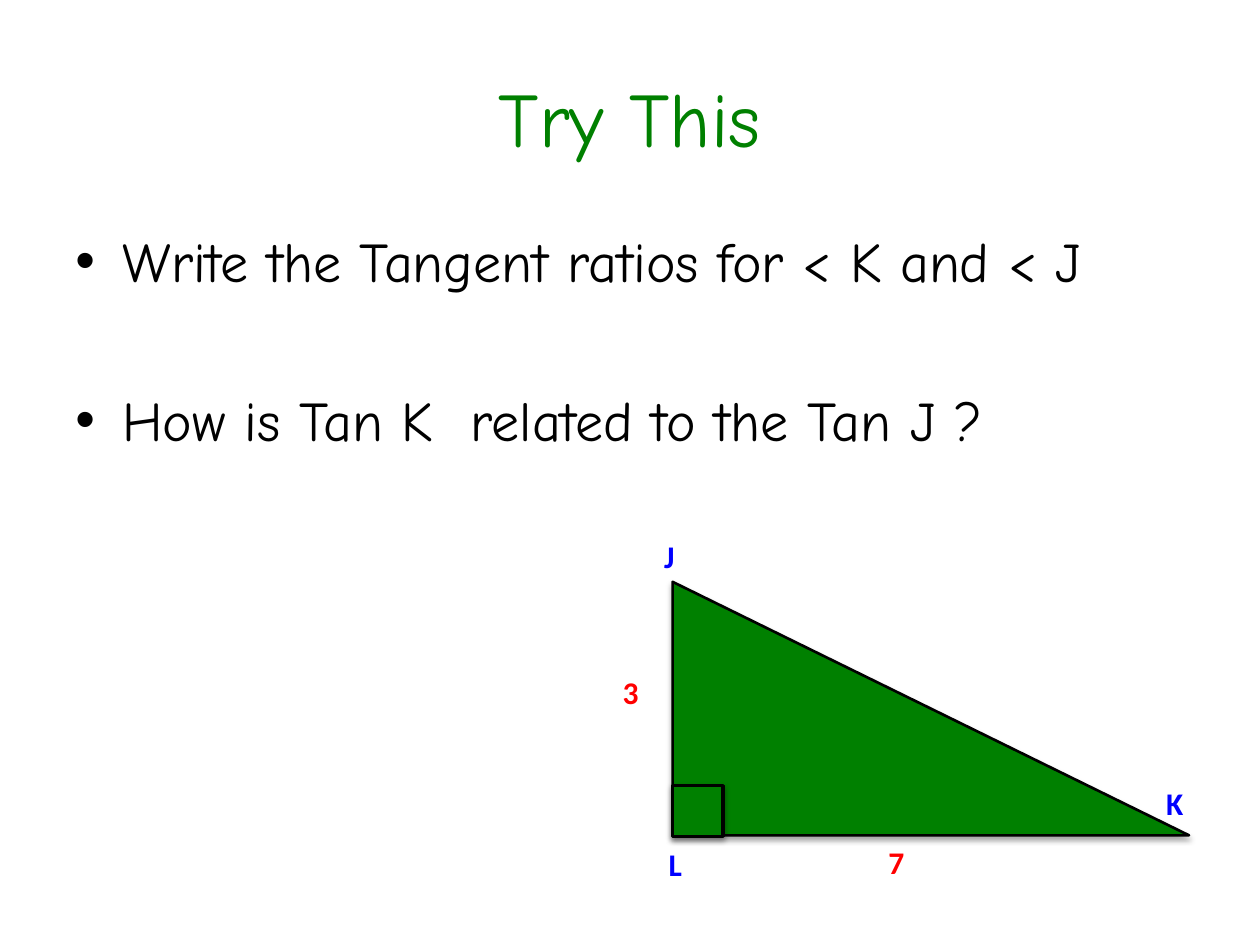
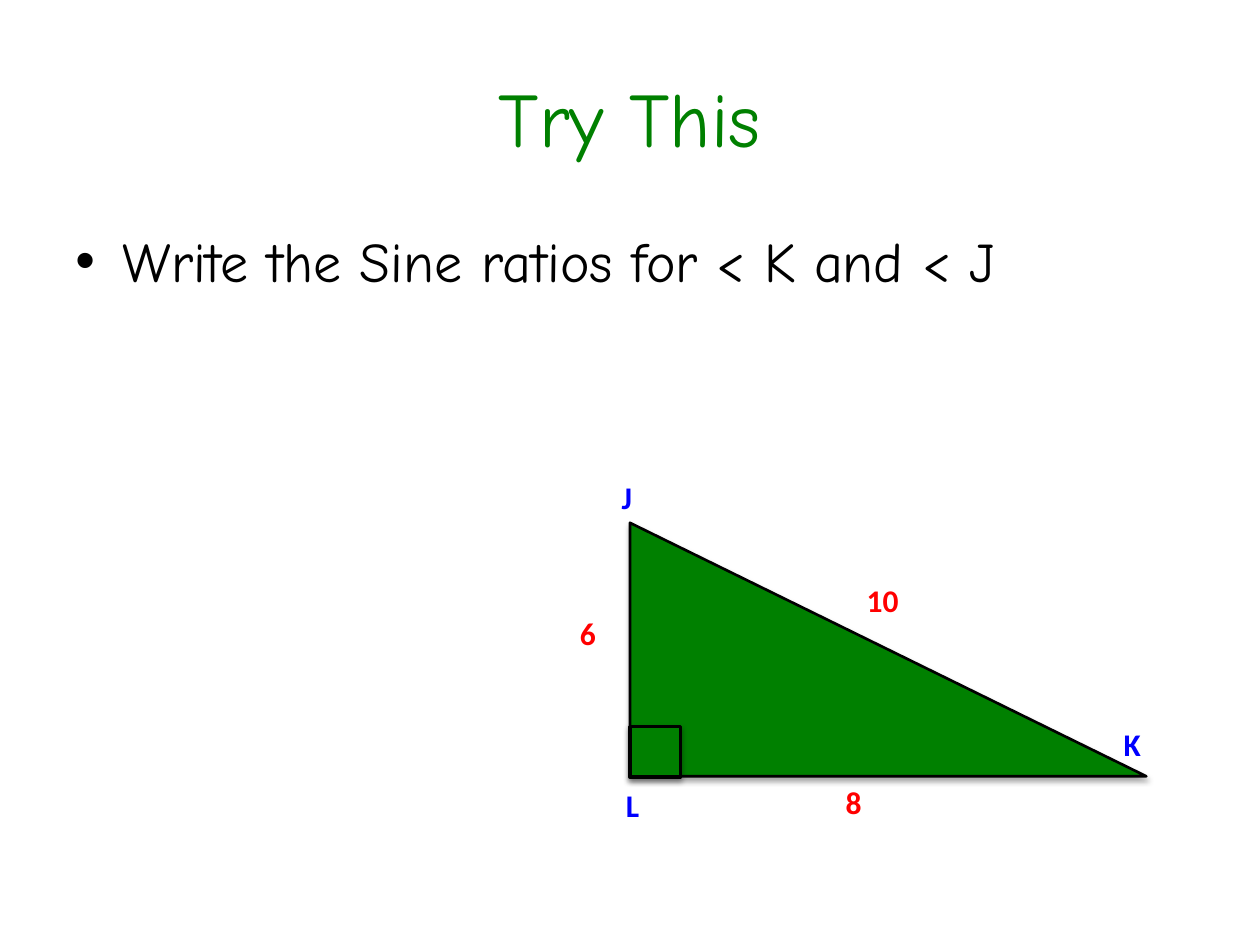
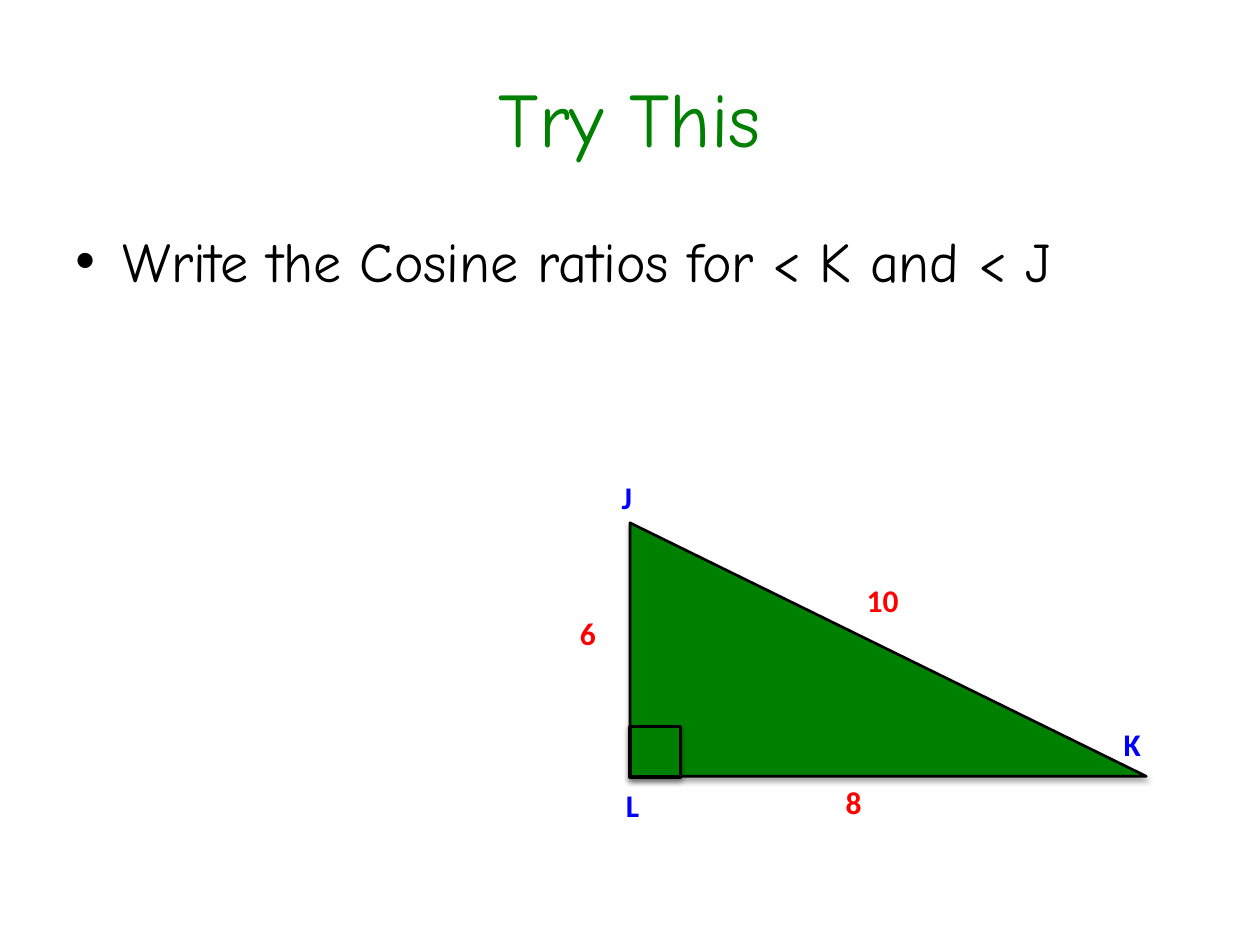
from lxml import etree
from pptx import Presentation
from pptx import util as u
from pptx.dml.color import RGBColor
from pptx.enum import shapes, text
from pptx.oxml.ns import qn

GREEN, BLACK, BLUE, RED = "008000", "000000", "0000FF", "FF0000"
HEAD_FONT, LABEL_FONT = "Comic Neue", "Calibri"
LABEL_H = 1.02


def rgb(code):
    return RGBColor.from_string(code)


class Deck:
    def __init__(self):
        self.prs = Presentation()
        self.prs.slide_width, self.prs.slide_height = u.Cm(25.4), u.Cm(19.05)
        self.s = None

    def new_slide(self):
        self.s = self.prs.slides.add_slide(self.prs.slide_layouts[6])

    def text(self, x, y, w, h, lines, size, color, font, bold=False):
        """Add a wrapped text box with one paragraph per line and return its frame."""
        tf = self.s.shapes.add_textbox(u.Cm(x), u.Cm(y), u.Cm(w), u.Cm(h)).text_frame
        tf.word_wrap = True
        tf.text = "\n".join(lines)
        for p in tf.paragraphs:
            for r in p.runs:
                r.font.size, r.font.name, r.font.bold = u.Pt(size), font, bold
                r.font.color.rgb = rgb(color)
        return tf

    def title(self, line):
        tf = self.text(1.27, 0.76, 22.86, 3.18, [line], 44, GREEN, HEAD_FONT)
        tf.vertical_anchor = text.MSO_ANCHOR.MIDDLE
        tf.paragraphs[0].alignment = text.PP_ALIGN.CENTER

    def bullets(self, lines):
        tf = self.text(1.27, 4.45, 22.86, 12.57, lines, 32, BLACK, HEAD_FONT)
        for i, p in enumerate(tf.paragraphs):
            p.space_before = u.Pt(52 if i else 6.4)
            pPr = p._p.get_or_add_pPr()
            pPr.set("marL", str(u.Cm(0.95)))
            pPr.set("indent", str(u.Cm(-0.95)))
            etree.SubElement(pPr, qn("a:buFont")).set("typeface", "Arial")
            etree.SubElement(pPr, qn("a:buChar")).set("char", "•")

    def label(self, x, y, w, line, color):
        tf = self.text(x, y, w, LABEL_H, [line], 18, color, LABEL_FONT, bold=True)
        tf.auto_size = text.MSO_AUTO_SIZE.SHAPE_TO_FIT_TEXT

    def shape(self, kind, x, y, w, h, line_width):
        sp = self.s.shapes.add_shape(kind, u.Cm(x), u.Cm(y), u.Cm(w), u.Cm(h))
        sp.fill.solid()
        sp.fill.fore_color.rgb = rgb(GREEN)
        sp.line.color.rgb = rgb(BLACK)
        sp.line.width = u.Pt(line_width)
        self.soft_shadow(sp)

    def soft_shadow(self, sp):
        """Replace the theme shadow with a faint one straight below the shape."""
        sp.shadow.inherit = False
        effects = sp._element.spPr.find(qn("a:effectLst"))
        shadow = etree.SubElement(effects, qn("a:outerShdw"), blurRad=str(u.Pt(3.1)),
                                  dist=str(u.Pt(1.8)), dir="5400000", rotWithShape="0")
        color = etree.SubElement(shadow, qn("a:srgbClr"), val=BLACK)
        etree.SubElement(color, qn("a:alpha"), val="35000")

    def right_triangle(self, x, y, left, bottom, hypotenuse=None):
        """Draw triangle JLK with its top corner J at x, y and its known side lengths."""
        self.shape(shapes.MSO_SHAPE.RIGHT_TRIANGLE, x, y, 10.41, 5.11, 1.5)
        for name, dx, dy, w in (("J", -0.42, -1.02, 0.84), ("L", -0.33, 5.18, 0.84),
                                ("K", 9.7, 3.96, 1.35)):
            self.label(x + dx, y + dy, w, name, BLUE)
        self.shape(shapes.MSO_SHAPE.RECTANGLE, x, y + 4.11, 1.02, 1.02, 2)
        for length, dx, dy in ((left, -1.26, 1.71), (bottom, 4.1, 5.13),
                               (hypotenuse, 4.52, 1.04)):
            if length:
                self.label(x + dx, y + dy, 1.37, str(length), RED)


def main():
    deck = Deck()
    exercises = (
        (["Write the Tangent ratios for < K and < J",
          "How is Tan K  related to the Tan J ?"], (13.56, 11.73), (3, 7)),
        (["Write the Sine ratios for < K and < J"], (12.7, 10.54), (6, 8, 10)),
        (["Write the Cosine ratios for < K and < J"], (12.7, 10.54), (6, 8, 10)),
    )
    for questions, corner, sides in exercises:
        deck.new_slide()
        deck.title("Try This")
        deck.bullets(questions)
        deck.right_triangle(*corner, *sides)
    deck.prs.save("out.pptx")


if __name__ == "__main__":
    main()
